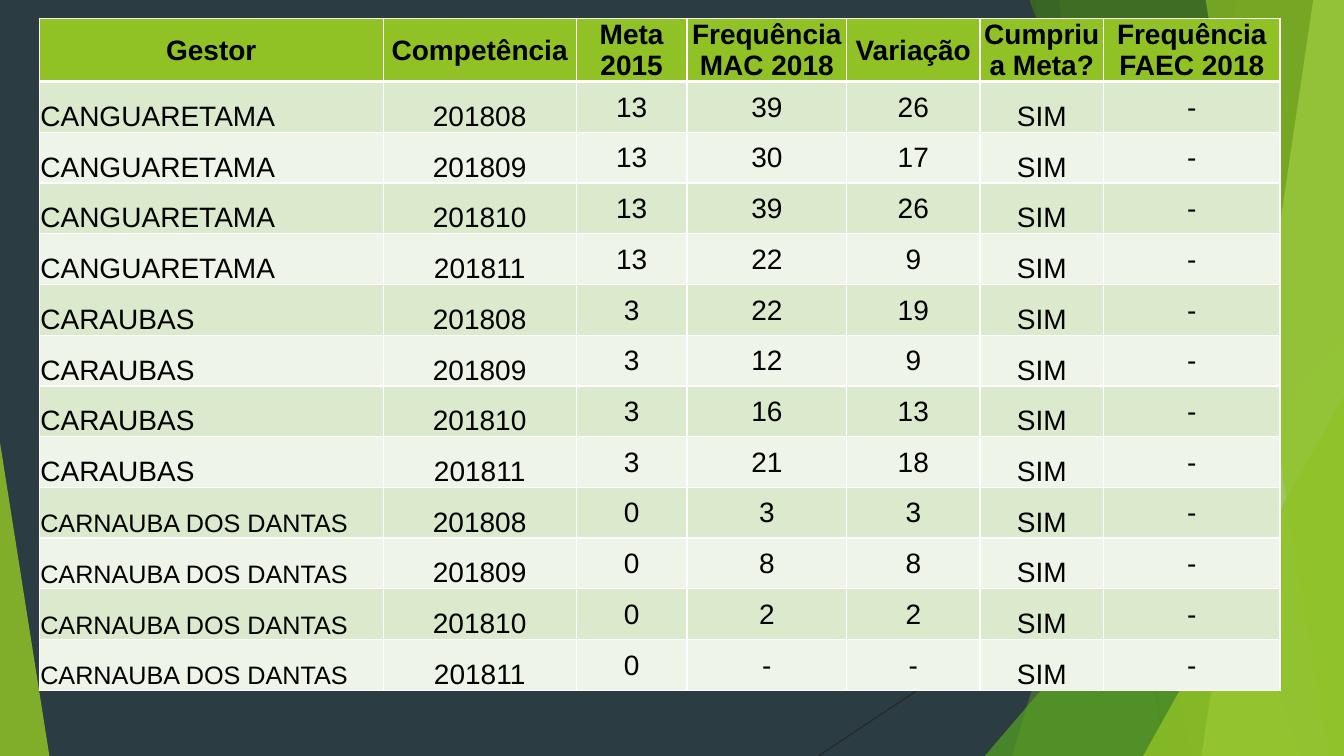
"""Build the slide with the table of monthly goals by town."""
from dataclasses import dataclass

from lxml.etree import SubElement as Sub
from pptx import Presentation
from pptx.dml.color import RGBColor as Rgb
from pptx.enum.shapes import MSO_CONNECTOR as Link, MSO_SHAPE as Form
from pptx.enum.text import MSO_ANCHOR as Anchor, PP_ALIGN as Align
from pptx.oxml.ns import qn
from pptx.util import Pt


@dataclass(frozen=True)
class Theme:
    """Colours, font and type sizes of the slide."""
    back: str = "2C3C43"
    line: str = "262626"
    lime: str = "90C226"
    leaf: str = "54A021"
    moss: str = "3F7819"
    pale: str = "C0E474"
    odd: str = "DBE9CD"
    even: str = "EEF4E8"
    white: str = "FFFFFF"
    ink: str = "000000"
    font: str = "Arial"
    size: int = 20
    small: int = 18


THEME = Theme()
WIDE, HIGH = 960, 540
LEFT, TOP = 28.08, 12.96
COLS = [245.7, 137.8, 79.2, 114, 95.3, 88.3, 126]
HEAD_H, ROW_H = 43.92, 36.24
HEADS = ["Gestor", "Competência", "Meta\n2015", "Frequência MAC 2018",
         "Variação", "Cumpriu a Meta?", "Frequência FAEC 2018"]
MONTHS = ["201808", "201809", "201810", "201811"]
TOWNS = [
    ("CANGUARETAMA", 13, [39, 30, 39, 22], THEME.size),
    ("CARAUBAS", 3, [22, 12, 16, 21], THEME.size),
    ("CARNAUBA DOS DANTAS", 0, [3, 8, 2, None], THEME.small),
]
LOW_COLS = (0, 1, 5)


def add_line(slide, start, end):
    """Draw a thin straight line without shadow."""
    line = slide.shapes.add_connector(
        Link.STRAIGHT, *(Pt(n) for n in (*start, *end)))
    line.line.color.rgb = Rgb.from_string(THEME.line)
    line.line.width = Pt(0.75)
    Sub(line.element.spPr, qn("a:effectLst"))


def tint(shape, color, alpha):
    """Fill a shape with a colour of the given opacity in percent."""
    shape.shadow.inherit = False
    shape.line.fill.background()
    shape.fill.solid()
    shape.fill.fore_color.rgb = Rgb.from_string(color)
    node = shape.element.spPr.find(qn("a:solidFill"))[0]
    Sub(node, qn("a:alpha"), val=str(alpha * 1000))


def add_band(slide, top, base, color, alpha):
    """Draw a full-height band from a slanted edge to the right side."""
    pen = slide.shapes.build_freeform(Pt(top), Pt(-0.72))
    points = [(WIDE, -0.72), (WIDE, HIGH), (base, HIGH)]
    pen.add_line_segments([(Pt(x), Pt(y)) for x, y in points])
    tint(pen.convert_to_shape(), color, alpha)


def add_wedge(slide, box, peak, color, alpha):
    """Draw a triangle with its peak at a share of its width."""
    shape = slide.shapes.add_shape(
        Form.ISOSCELES_TRIANGLE, *(Pt(n) for n in box))
    shape.adjustments[0] = peak
    tint(shape, color, alpha)


def add_facets(slide):
    """Draw the green facets behind the table."""
    add_line(slide, (738, 0), (833.76, HIGH))
    add_line(slide, (WIDE, 290.16), (584.64, HIGH))
    add_band(slide, 884.16, 722.88, THEME.lime, 30)
    add_band(slide, 756, 851.76, THEME.lime, 20)
    add_wedge(slide, (703.44, 239.76, 256.56, 300.24), 1, THEME.leaf, 72)
    add_band(slide, 735.12, 929.52, THEME.moss, 70)
    add_band(slide, 938.16, 858.24, THEME.pale, 70)
    add_band(slide, 861.12, 948.96, THEME.lime, 65)
    add_wedge(slide, (816.48, 282.96, 143.52, 257.04), 1, THEME.lime, 80)
    add_wedge(slide, (0, 316.08, 35.28, 223.92), 0, THEME.lime, 85)


def set_edges(cell, top, base):
    """Give a cell white borders with their own top and bottom widths."""
    props = cell._tc.get_or_add_tcPr()
    for side, width in (("L", 1), ("R", 1), ("T", top), ("B", base)):
        edge = Sub(props, qn(f"a:ln{side}"), w=str(Pt(width)))
        Sub(Sub(edge, qn("a:solidFill")), qn("a:srgbClr"), val=THEME.white)


def set_cell(cell, text, fill, size, bold, align, anchor):
    """Write and format one table cell."""
    cell.fill.solid()
    cell.fill.fore_color.rgb = Rgb.from_string(fill)
    cell.margin_left = cell.margin_right = cell.margin_top = Pt(0.72)
    cell.margin_bottom = Pt(0)
    cell.vertical_anchor = anchor
    frame = cell.text_frame
    for i, part in enumerate(text.split("\n")):
        para = frame.add_paragraph() if i else frame.paragraphs[0]
        para.alignment = align
        run = para.add_run()
        run.text = part
        run.font.name = THEME.font
        run.font.size = Pt(size)
        run.font.bold = bold
        run.font.color.rgb = Rgb.from_string(THEME.ink)


def list_rows():
    """Return each data row with the type size of its town."""
    rows = []
    for town, goal, counts, size in TOWNS:
        for month, count in zip(MONTHS, counts):
            gap = "-" if count is None else str(count - goal)
            shown = "-" if count is None else str(count)
            rows.append(([town, month, str(goal), shown, gap, "SIM", "-"],
                         size))
    return rows


def add_goals(slide):
    """Add the table of goals."""
    rows = list_rows()
    high = HEAD_H + ROW_H * len(rows)
    table = slide.shapes.add_table(
        len(rows) + 1, len(COLS), Pt(LEFT), Pt(TOP),
        Pt(sum(COLS)), Pt(high)).table
    for col, width in zip(table.columns, COLS):
        col.width = Pt(width)
    for i, row in enumerate(table.rows):
        row.height = Pt(ROW_H if i else HEAD_H)
    for c, text in enumerate(HEADS):
        cell = table.cell(0, c)
        set_edges(cell, 1, 3)
        set_cell(cell, text, THEME.lime, THEME.size, True,
                 Align.CENTER, Anchor.MIDDLE)
    for r, (texts, size) in enumerate(rows, 1):
        fill = THEME.odd if r % 2 else THEME.even
        for c, text in enumerate(texts):
            cell = table.cell(r, c)
            set_edges(cell, 3 if r == 1 else 1, 1)
            set_cell(cell, text, fill, THEME.size if c else size, False,
                     Align.CENTER if c else Align.LEFT,
                     Anchor.BOTTOM if c in LOW_COLS else Anchor.MIDDLE)


def main():
    """Build and save the deck."""
    deck = Presentation()
    deck.slide_width, deck.slide_height = Pt(WIDE), Pt(HIGH)
    slide = deck.slides.add_slide(deck.slide_layouts[6])
    slide.background.fill.solid()
    slide.background.fill.fore_color.rgb = Rgb.from_string(THEME.back)
    add_facets(slide)
    add_goals(slide)
    deck.save("out.pptx")


if __name__ == "__main__":
    main()
